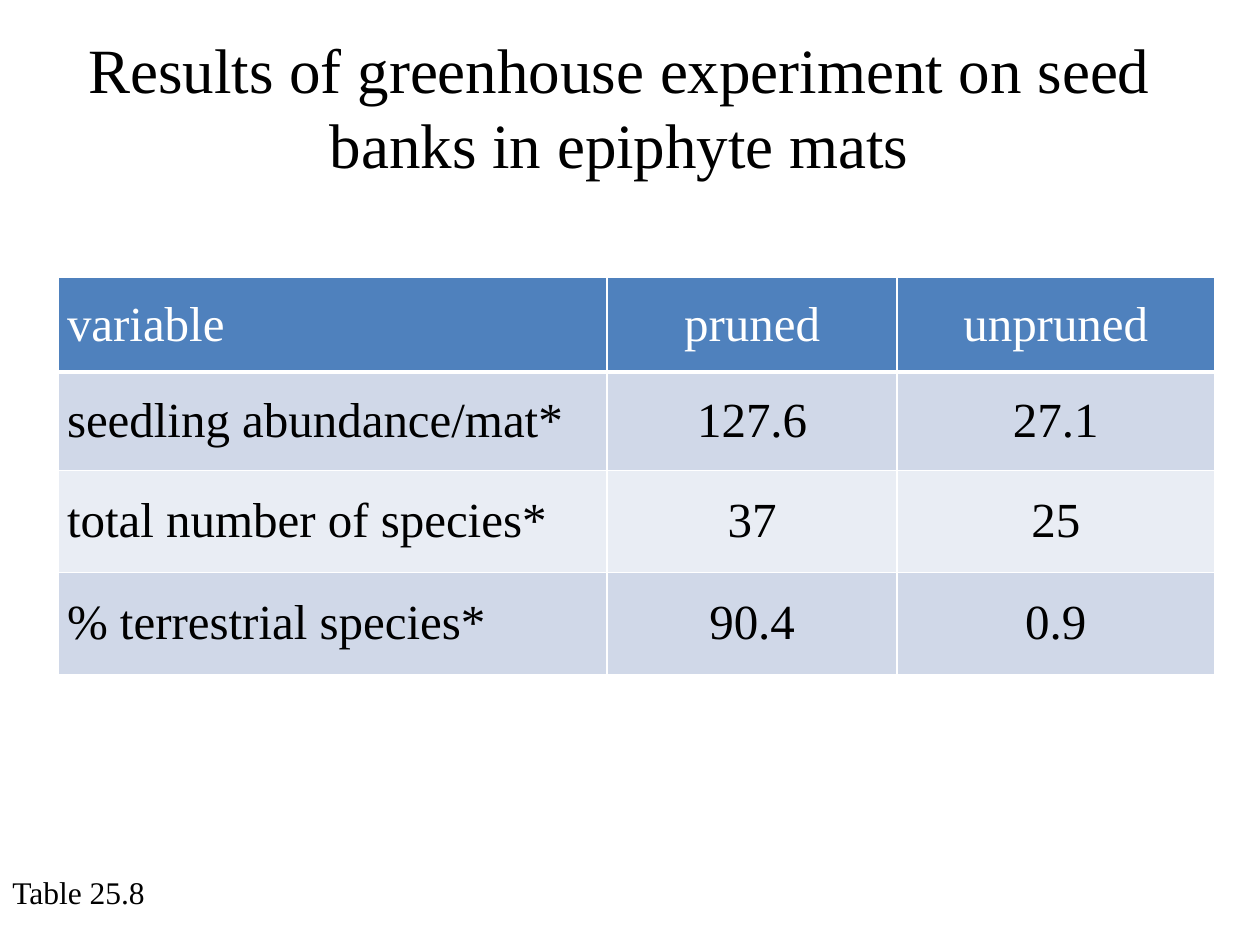
import lxml.etree
import pptx
import pptx.dml.color
import pptx.enum.text
import pptx.oxml.ns
import pptx.util

Pt = pptx.util.Pt
RGBColor = pptx.dml.color.RGBColor
MSO_ANCHOR = pptx.enum.text.MSO_ANCHOR
PP_ALIGN = pptx.enum.text.PP_ALIGN
qn = pptx.oxml.ns.qn

BLACK = RGBColor(0x00, 0x00, 0x00)
WHITE = RGBColor(0xFF, 0xFF, 0xFF)
HEADER_BLUE = RGBColor(0x4F, 0x81, 0xBD)
BAND_DARK = RGBColor(0xD0, 0xD8, 0xE8)
BAND_LIGHT = RGBColor(0xE9, 0xED, 0xF4)


def write_text(text_frame, text, size, color, alignment):
    paragraph = text_frame.paragraphs[0]
    paragraph.alignment = alignment
    run = paragraph.add_run()
    run.text = text
    run.font.name = "Times New Roman"
    run.font.size = Pt(size)
    run.font.bold = False
    run.font.color.rgb = color


def set_borders(cell, widths):
    """Draw white cell borders; widths maps a side (L, R, T, B) to points."""
    properties = cell._tc.get_or_add_tcPr()
    for position, (side, width) in enumerate(widths.items()):
        line = lxml.etree.Element(qn(f"a:ln{side}"), w=str(Pt(width)))
        fill = lxml.etree.SubElement(line, qn("a:solidFill"))
        lxml.etree.SubElement(fill, qn("a:srgbClr"), val=str(WHITE))
        properties.insert(position, line)


presentation = pptx.Presentation()
presentation.slide_width = Pt(720)
presentation.slide_height = Pt(540)
slide = presentation.slides.add_slide(presentation.slide_layouts[6])

title = slide.shapes.add_textbox(Pt(14.4), Pt(13.7), Pt(679), Pt(94.3))
title.text_frame.word_wrap = True
write_text(title.text_frame, "Results of greenhouse experiment on seed banks in epiphyte mats",
           36, BLACK, PP_ALIGN.CENTER)

table_number = slide.shapes.add_textbox(Pt(0), Pt(495.4), Pt(95.8), Pt(28.8))
table_number.text_frame.word_wrap = False
write_text(table_number.text_frame, "Table 25.8", 18, BLACK, PP_ALIGN.LEFT)

results = [
    ["variable", "pruned", "unpruned"],
    ["seedling abundance/mat*", "127.6", "27.1"],
    ["total number of species*", "37", "25"],
    ["% terrestrial species*", "90.4", "0.9"],
]
column_widths = [313.9, 165.6, 181.4]
row_heights = [54, 56.2, 58.3, 58.3]

table = slide.shapes.add_table(
    len(results), len(column_widths), Pt(33.1), Pt(158.6),
    Pt(sum(column_widths)), Pt(sum(row_heights))).table
for column, width in zip(table.columns, column_widths):
    column.width = Pt(width)
for row, height in zip(table.rows, row_heights):
    row.height = Pt(height)

for row_index, values in enumerate(results):
    is_header = row_index == 0
    if is_header:
        fill_color = HEADER_BLUE
    else:
        fill_color = BAND_DARK if row_index % 2 else BAND_LIGHT
    borders = {"L": 1, "R": 1, "T": 3 if row_index == 1 else 1, "B": 3 if is_header else 1}
    for column_index, value in enumerate(values):
        cell = table.cell(row_index, column_index)
        cell.margin_left = cell.margin_right = Pt(5.2)
        cell.margin_top = cell.margin_bottom = Pt(0)
        cell.vertical_anchor = MSO_ANCHOR.MIDDLE
        cell.fill.solid()
        cell.fill.fore_color.rgb = fill_color
        set_borders(cell, borders)
        write_text(cell.text_frame, value, 28, WHITE if is_header else BLACK,
                   PP_ALIGN.CENTER if column_index else PP_ALIGN.LEFT)

presentation.save("out.pptx")
